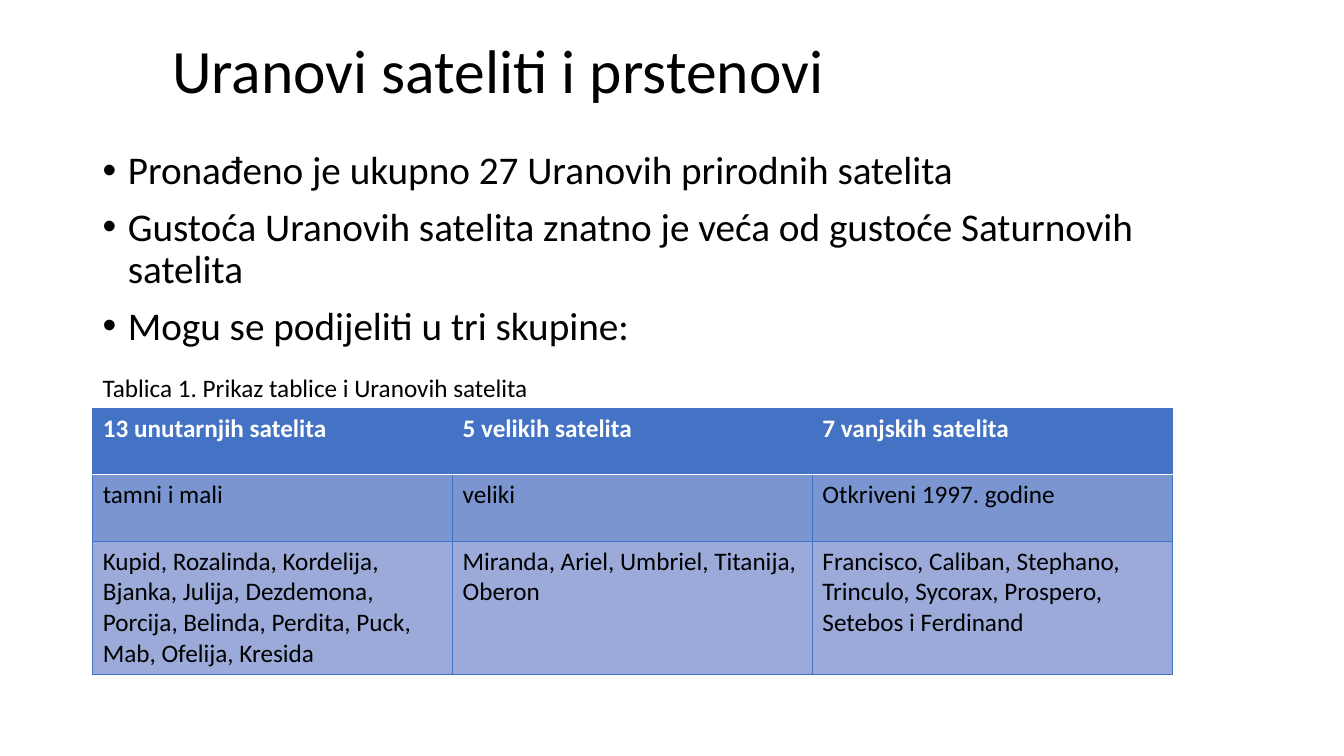
import pptx
import pptx.util
import pptx.dml.color
import pptx.enum.text
import pptx.oxml
import pptx.oxml.ns

Pt = pptx.util.Pt
COLORS = {
    "text": "000000",
    "white": "FFFFFF",
    "blue": "4472C4",
    "middle": "7A95D0",
    "light": "9BAAD9",
}
LEFT = 66.24
WIDTH = 828

BULLETS = [
    "Pronađeno je ukupno 27 Uranovih prirodnih satelita",
    "Gustoća Uranovih satelita znatno je veća od gustoće Saturnovih satelita",
    "Mogu se podijeliti u tri skupine:",
]
SATELLITES = [
    ["13 unutarnjih satelita", "5 velikih satelita", "7 vanjskih satelita"],
    ["tamni i mali", "veliki", "Otkriveni 1997. godine"],
    [
        "Kupid, Rozalinda, Kordelija, Bjanka, Julija, Dezdemona, "
        "Porcija, Belinda, Perdita, Puck, Mab, Ofelija, Kresida",
        "Miranda, Ariel, Umbriel, Titanija, Oberon",
        "Francisco, Caliban, Stephano, Trinculo, Sycorax, Prospero, "
        "Setebos i Ferdinand",
    ],
]
ROW_HEIGHTS = [47.5, 47.5, 95]
ROW_FILLS = ["blue", "middle", "light"]


def rgb(name):
    return pptx.dml.color.RGBColor.from_string(COLORS[name])


def write(p, text, size=18, color="text", bold=False, spacing=None, before=None):
    r = p.add_run()
    r.text = text
    r.font.name = "Calibri"
    r.font.size = Pt(size)
    r.font.bold = bold
    r.font.color.rgb = rgb(color)
    if spacing is not None:
        p.line_spacing = spacing
    if before is not None:
        p.space_before = Pt(before)


def add_bullet(p, indent):
    pPr = p._p.get_or_add_pPr()
    pPr.set("marL", str(Pt(indent)))
    pPr.set("indent", str(-Pt(indent)))
    ns = pptx.oxml.ns.nsdecls("a")
    for xml in (f'<a:buFont {ns} typeface="Arial"/>', f'<a:buChar {ns} char="•"/>'):
        pPr.append(pptx.oxml.parse_xml(xml))


def set_border(cell, index, side, color, width):
    ns = pptx.oxml.ns.nsdecls("a")
    line = pptx.oxml.parse_xml(
        f'<a:ln{side} {ns} w="{Pt(width)}"><a:solidFill>'
        f'<a:srgbClr val="{COLORS[color]}"/></a:solidFill></a:ln{side}>'
    )
    cell._tc.get_or_add_tcPr().insert(index, line)


class SlideBuilder:
    def __init__(self, slide):
        self.slide = slide

    def text(self, left, top, width, height, lines, middle=False, bullet=False, **style):
        sp = self.slide.shapes.add_textbox(Pt(left), Pt(top), Pt(width), Pt(height))
        tf = sp.text_frame
        tf.word_wrap = True
        if middle:
            tf.vertical_anchor = pptx.enum.text.MSO_ANCHOR.MIDDLE
        for i, line in enumerate(lines):
            p = tf.add_paragraph() if i else tf.paragraphs[0]
            write(p, line, **style)
            if bullet:
                add_bullet(p, 18)

    def table(self, left, top, width, rows, heights, fills):
        count = len(rows[0])
        frame = self.slide.shapes.add_table(
            len(rows), count, Pt(left), Pt(top), Pt(width), Pt(sum(heights))
        )
        tbl = frame.table
        tbl.horz_banding = False
        for column in tbl.columns:
            column.width = Pt(width / count)
        for i, values in enumerate(rows):
            tbl.rows[i].height = Pt(heights[i])
            header = i == 0
            for j, value in enumerate(values):
                cell = tbl.cell(i, j)
                cell.fill.solid()
                cell.fill.fore_color.rgb = rgb(fills[i])
                write(cell.text_frame.paragraphs[0], value,
                      color="white" if header else "text", bold=header)
                for k, side in enumerate("LRTB"):
                    divider = (i, side) in ((0, "B"), (1, "T"))
                    set_border(cell, k, side, "white" if divider else "blue",
                               1 if divider else 0.5)


def main():
    prs = pptx.Presentation()
    prs.slide_width = Pt(960)
    prs.slide_height = Pt(540)
    s = SlideBuilder(prs.slides.add_slide(prs.slide_layouts[6]))
    s.text(115.92, 0, WIDTH, 104.4, ["Uranovi sateliti i prstenovi"],
           middle=True, size=44, spacing=0.9)
    s.text(LEFT, 104.4, WIDTH, 342.72, BULLETS,
           bullet=True, size=28, spacing=0.9, before=10)
    s.table(LEFT, 291.6, 771.12, SATELLITES, ROW_HEIGHTS, ROW_FILLS)
    s.text(LEFT, 262.08, 350.64, 28.8, ["Tablica 1. Prikaz tablice i Uranovih satelita"])
    prs.save("out.pptx")


if __name__ == "__main__":
    main()
